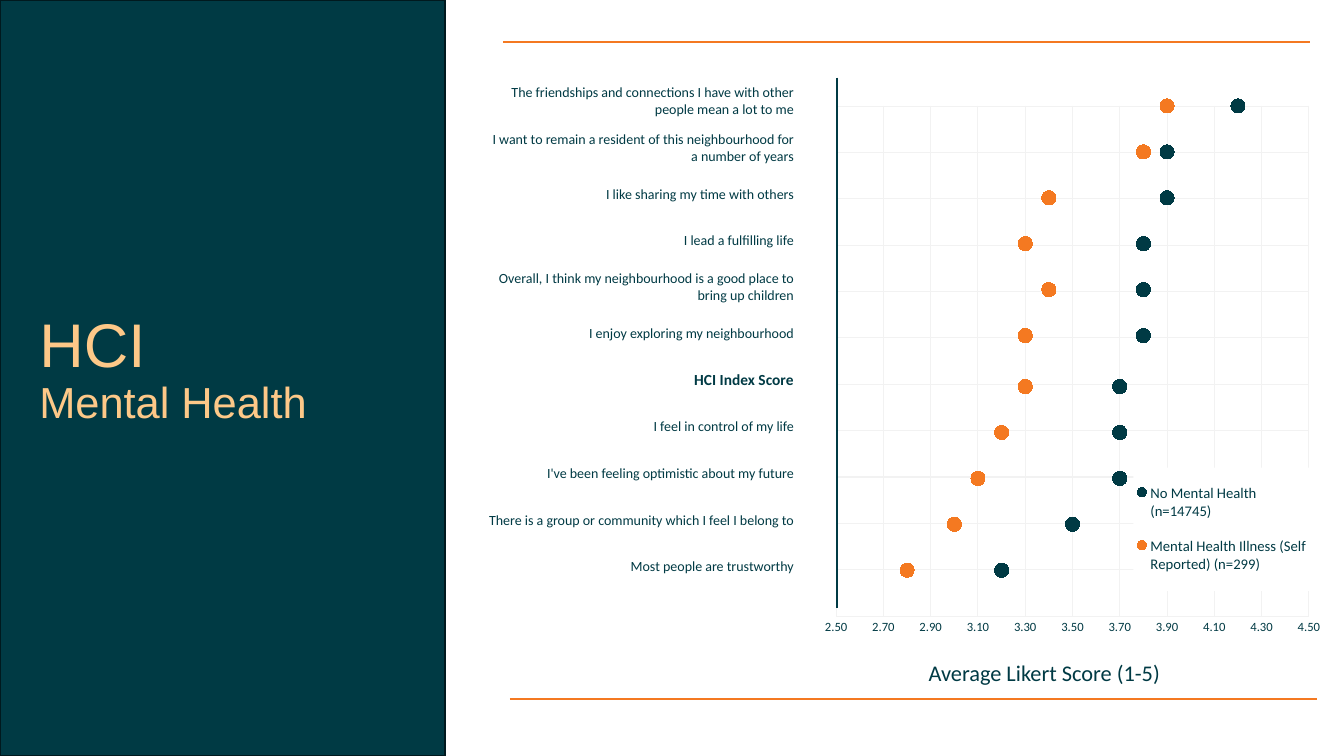
import pptx
import pptx.util
import pptx.chart.data
import pptx.dml.color
import pptx.enum.chart
import pptx.enum.shapes
import pptx.enum.text
import pptx.oxml

Pt = pptx.util.Pt
rgb = pptx.dml.color.RGBColor.from_string

theme = {
    "teal": rgb("003A44"), "teal_edge": rgb("00191E"), "orange": rgb("F47921"),
    "peach": rgb("FDC888"), "grid": rgb("F2F2F2"), "white": rgb("FFFFFF"),
    "heading_font": "Arial", "body_font": "Calibri",
    "heading": 44, "subheading": 31, "axis_title": 16, "index": 11,
    "legend": 10.5, "statement": 10, "ticks": 9,
}

statements = [
    ("The friendships and connections I have with other people mean a lot to me", 4.2, 3.9),
    ("I want to remain a resident of this neighbourhood for a number of years", 3.9, 3.8),
    ("I like sharing my time with others", 3.9, 3.4),
    ("I lead a fulfilling life", 3.8, 3.3),
    ("Overall, I think my neighbourhood is a good place to bring up children", 3.8, 3.4),
    ("I enjoy exploring my neighbourhood", 3.8, 3.3),
    ("HCI Index Score", 3.7, 3.3),
    ("I feel in control of my life", 3.7, 3.2),
    ("I've been feeling optimistic about my future", 3.7, 3.1),
    ("There is a group or community which I feel I belong to", 3.5, 3.0),
    ("Most people are trustworthy", 3.2, 2.8),
]
groups = [
    ("No Mental Health (n=14745)", theme["teal"]),
    ("Mental Health Illness (Self Reported) (n=299)", theme["orange"]),
]
row_step = round(100 / len(statements), 2)


def style_font(font, size, color, family=theme["body_font"], bold=False):
    for attribute, value in {"size": Pt(size), "name": family, "bold": bold}.items():
        setattr(font, attribute, value)
    font.color.rgb = color


def set_layout(element, mode, x, y, w, h):
    for old in element.findall(pptx.oxml.ns.qn("c:layout")):
        element.remove(old)
    target = f'<c:layoutTarget val="{mode}"/>' if mode else ""
    layout = pptx.oxml.parse_xml(
        f'<c:layout {pptx.oxml.ns.nsdecls("c")}><c:manualLayout>{target}'
        '<c:xMode val="edge"/><c:yMode val="edge"/>'
        f'<c:x val="{x}"/><c:y val="{y}"/><c:w val="{w}"/><c:h val="{h}"/>'
        '</c:manualLayout></c:layout>')
    element.insert(0 if mode else 1, layout)


deck = pptx.Presentation()
deck.slide_width, deck.slide_height = Pt(960), Pt(540)
slide = deck.slides.add_slide(deck.slide_layouts[6])
shapes = slide.shapes

side_panel = shapes.add_shape(
    pptx.enum.shapes.MSO_SHAPE.RECTANGLE, Pt(0), Pt(0), Pt(317.9), Pt(540))
side_panel.shadow.inherit = False
side_panel.fill.solid()
side_panel.fill.fore_color.rgb = theme["teal"]
side_panel.line.color.rgb = theme["teal_edge"]
side_panel.line.width = Pt(1.5)

heading = shapes.add_textbox(Pt(21), Pt(218), Pt(281), Pt(94.5)).text_frame
heading.word_wrap = True
heading.vertical_anchor = pptx.enum.text.MSO_ANCHOR.MIDDLE
heading_line = heading.paragraphs[0]
heading_line.line_spacing = 0.9
topic = heading_line.add_run()
topic.text = "HCI"
heading_line.add_line_break()
subtopic = heading_line.add_run()
subtopic.text = "Mental Health"
for run, size in ((topic, "heading"), (subtopic, "subheading")):
    style_font(run.font, theme[size], theme["peach"], theme["heading_font"])

axis_title = shapes.add_textbox(Pt(656.2), Pt(467.3), Pt(224), Pt(26.6)).text_frame
axis_title.word_wrap = False
axis_title.text = "Average Likert Score (1-5)"
style_font(axis_title.paragraphs[0].runs[0].font, theme["axis_title"], theme["teal"])

scores = pptx.chart.data.XyChartData(number_format="0.00")
for column, (group, color) in enumerate(groups, 1):
    group_scores = scores.add_series(group)
    for position, statement in enumerate(statements):
        height = round(100 * (len(statements) - position) / len(statements))
        group_scores.add_data_point(statement[column], height)

chart = shapes.add_chart(
    pptx.enum.chart.XL_CHART_TYPE.XY_SCATTER,
    Pt(570.4), Pt(32.4), Pt(389.5), Pt(433.4), scores).chart
chart.has_title = False
style_font(chart.font, theme["statement"], theme["teal"])
chart.plots[0].vary_by_categories = False
set_layout(chart._chartSpace.chart.plotArea, "inner", 0.069, 0.1, 0.867, 0.841)

for series, (group, color) in zip(chart.plots[0].series, groups):
    series.smooth = False
    series.format.line.fill.background()
    series.marker.style = pptx.enum.chart.XL_MARKER_STYLE.CIRCLE
    series.marker.size = 10
    series.marker.format.fill.solid()
    series.marker.format.fill.fore_color.rgb = color
    series.marker.format.line.color.rgb = color

no_tick = pptx.enum.chart.XL_TICK_MARK.NONE
score_axis, row_axis = chart.category_axis, chart.value_axis
axis_formats = (
    (score_axis, {"minimum_scale": 2.5, "maximum_scale": 4.5, "major_unit": 0.2}),
    (row_axis, {"minimum_scale": 0, "maximum_scale": 100, "major_unit": row_step,
                "visible": False}),
)
for axis, axis_format in axis_formats:
    common = {"major_tick_mark": no_tick, "minor_tick_mark": no_tick,
              "has_major_gridlines": True, "has_title": False}
    for attribute, value in {**common, **axis_format}.items():
        setattr(axis, attribute, value)
    for rule in (axis.format.line, axis.major_gridlines.format.line):
        rule.color.rgb = theme["grid"]
        rule.width = Pt(0.75)
style_font(score_axis.tick_labels.font, theme["ticks"], theme["teal"])
score_axis.tick_labels.number_format = "0.00"
score_axis.tick_labels.number_format_is_linked = False

chart.has_legend = True
legend = chart.legend
legend.position = pptx.enum.chart.XL_LEGEND_POSITION.TOP
legend.include_in_layout = False
style_font(legend.font, theme["legend"], theme["teal"])
set_layout(legend._element, None, 0.614, 0.696, 0.325, 0.203)
legend._element.find(pptx.oxml.ns.qn("c:txPr")).addprevious(pptx.oxml.parse_xml(
    f'<c:spPr {pptx.oxml.ns.nsdecls("c", "a")}><a:solidFill>'
    f'<a:srgbClr val="{theme["white"]}"/></a:solidFill></c:spPr>'))

statement_table = shapes.add_table(
    len(statements), 1, Pt(348), Pt(55.4), Pt(219.6), Pt(365.8)).table
statement_table.first_row = False
statement_table.horz_banding = False
cell_format = {
    "margin_left": Pt(0.7), "margin_right": Pt(0.7), "margin_top": Pt(0.7),
    "margin_bottom": Pt(0), "vertical_anchor": pptx.enum.text.MSO_ANCHOR.MIDDLE,
}
for position, (wording, *_) in enumerate(statements):
    cell = statement_table.cell(position, 0)
    cell.fill.background()
    for attribute, value in cell_format.items():
        setattr(cell, attribute, value)
    cell.text = wording
    paragraph = cell.text_frame.paragraphs[0]
    paragraph.alignment = pptx.enum.text.PP_ALIGN.RIGHT
    is_index = wording == "HCI Index Score"
    style_font(paragraph.runs[0].font, theme["index" if is_index else "statement"],
               theme["teal"], bold=is_index)

rules = (
    (359.3, 30.2, 936, 30.2, "orange", 1.5),
    (364.3, 499, 941, 499, "orange", 1.5),
    (597.9, 55.4, 597.9, 434.2, "teal", 1),
)
for left, top, right, bottom, color, width in rules:
    rule = shapes.add_connector(
        pptx.enum.shapes.MSO_CONNECTOR.STRAIGHT, Pt(left), Pt(top), Pt(right), Pt(bottom))
    rule.line.color.rgb = theme[color]
    rule.line.width = Pt(width)
    rule._element.spPr.append(pptx.oxml.parse_xml(
        f'<a:effectLst {pptx.oxml.ns.nsdecls("a")}/>'))

deck.save("out.pptx")
